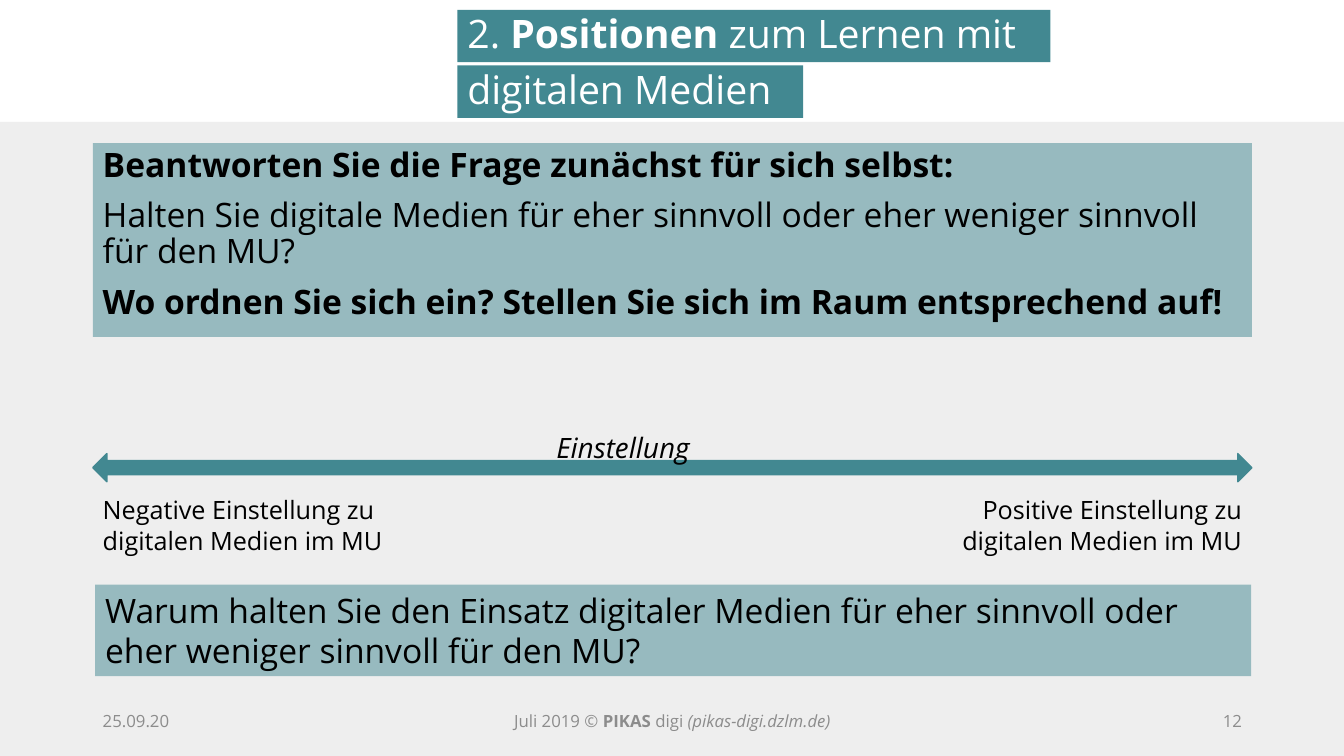
from lxml import etree
from pptx import Presentation
from pptx.dml.color import RGBColor
from pptx.enum.shapes import MSO_SHAPE as Shape
from pptx.enum.text import MSO_ANCHOR as Anchor, PP_ALIGN as Align
from pptx.oxml.ns import qn
from pptx.util import Cm, Pt

TEAL = RGBColor(0x42, 0x88, 0x91)
PALE = RGBColor(0xEE, 0xEE, 0xEE)
GREY = RGBColor(0x8C, 0x8C, 0x8C)
BLACK = RGBColor(0, 0, 0)
WHITE = RGBColor(0xFF, 0xFF, 0xFF)
LEFT, WIDTH = 2.34, 29.21
RIGHT = LEFT + WIDTH

deck = Presentation()
deck.slide_width, deck.slide_height = Cm(33.87), Cm(19.05)
page = deck.slides.add_slide(deck.slide_layouts[6])


def add_block(place, color, kind=Shape.RECTANGLE, opacity=100):
    block = page.shapes.add_shape(kind, *map(Cm, place))
    block.shadow.inherit = False
    block.fill.solid()
    block.fill.fore_color.rgb = color
    block.line.fill.background()
    if opacity < 100:
        tint = block.fill._xPr.find(".//" + qn("a:srgbClr"))
        etree.SubElement(tint, qn("a:alpha"), val=str(opacity * 1000))
    return block


def write(box, paragraphs, size, color=BLACK, align=Align.LEFT,
          anchor=Anchor.TOP, line_spacing=None):
    """Each paragraph is a list of (text, font values)."""
    frame = box.text_frame
    frame.word_wrap = True
    frame.vertical_anchor = anchor
    for index, spans in enumerate(paragraphs):
        para = frame.add_paragraph() if index else frame.paragraphs[0]
        para.alignment = align
        para.line_spacing = line_spacing
        para.space_before = Pt(10 if index else 0)
        for text, values in spans:
            span = para.add_run()
            span.text = text
            span.font.color.rgb = color
            for name, value in {"name": "Open Sans", "size": Pt(size), **values}.items():
                setattr(span.font, name, value)


BOLD, ITALIC = {"bold": True}, {"italic": True}

# Grey ground below the title band
add_block((0, 3.07, 33.87, 15.98), PALE)

# Opening question
question = add_block((LEFT, 3.61, WIDTH, 4.88), TEAL, opacity=50)
write(question, [
    [("Beantworten Sie die Frage zunächst für sich selbst:", BOLD)],
    [("Halten Sie digitale Medien für eher sinnvoll oder eher weniger sinnvoll für den MU?", {})],
    [("Wo ordnen Sie sich ein? Stellen Sie sich im Raum entsprechend auf!", BOLD)],
], 24, line_spacing=0.9)

# Footer: date, source, page number
footer = [
    (LEFT, 7.62, Align.LEFT, [("25.09.20", {})]),
    (11.23, 11.43, Align.CENTER, [("Juli 2019 © ", {}), ("PIKAS", BOLD), (" digi ", {}),
                                  ("(pikas-digi.dzlm.de)", ITALIC)]),
    (RIGHT - 7.62, 7.62, Align.RIGHT, [("12", {})]),
]
for left, width, align, spans in footer:
    box = page.shapes.add_textbox(Cm(left), Cm(17.65), Cm(width), Cm(1.02))
    write(box, [spans], 12, GREY, align, Anchor.MIDDLE)

# Attitude scale with its two ends
scale = add_block((LEFT, 11.43, WIDTH, 0.71), TEAL, Shape.LEFT_RIGHT_ARROW)
scale.line.color.rgb = TEAL
scale.line.width = Pt(1)
ends = [
    ("Negative", LEFT, Align.LEFT),
    ("Positive", RIGHT - 8.2, Align.RIGHT),
]
for attitude, left, align in ends:
    box = page.shapes.add_textbox(Cm(left), Cm(12.34), Cm(8.2), Cm(1.8))
    write(box, [[(f"{attitude} Einstellung zu digitalen Medien im MU", {})]], 18, align=align)

# Closing question
reason = add_block((2.4, 14.73, 29.13, 2.31), TEAL, opacity=50)
write(reason, [[("Warum halten Sie den Einsatz digitaler Medien für eher sinnvoll "
                 "oder eher weniger sinnvoll für den MU?", {})]], 24)

# Scale caption
caption = page.shapes.add_textbox(Cm(13.77), Cm(10.72), Cm(4.22), Cm(1.14))
write(caption, [[("Einstellung", ITALIC)]], 20)

# Title on two bars
title = [
    (0.25, 14.94, [("2. ", {}), ("Positionen", BOLD), (" zum Lernen mit", {})]),
    (1.65, 8.71, [("digitalen Medien", {})]),
]
for top, width, spans in title:
    bar = add_block((11.53, top, width, 1.32), TEAL)
    write(bar, [spans], 28, WHITE, line_spacing=0.9)

deck.save("out.pptx")
